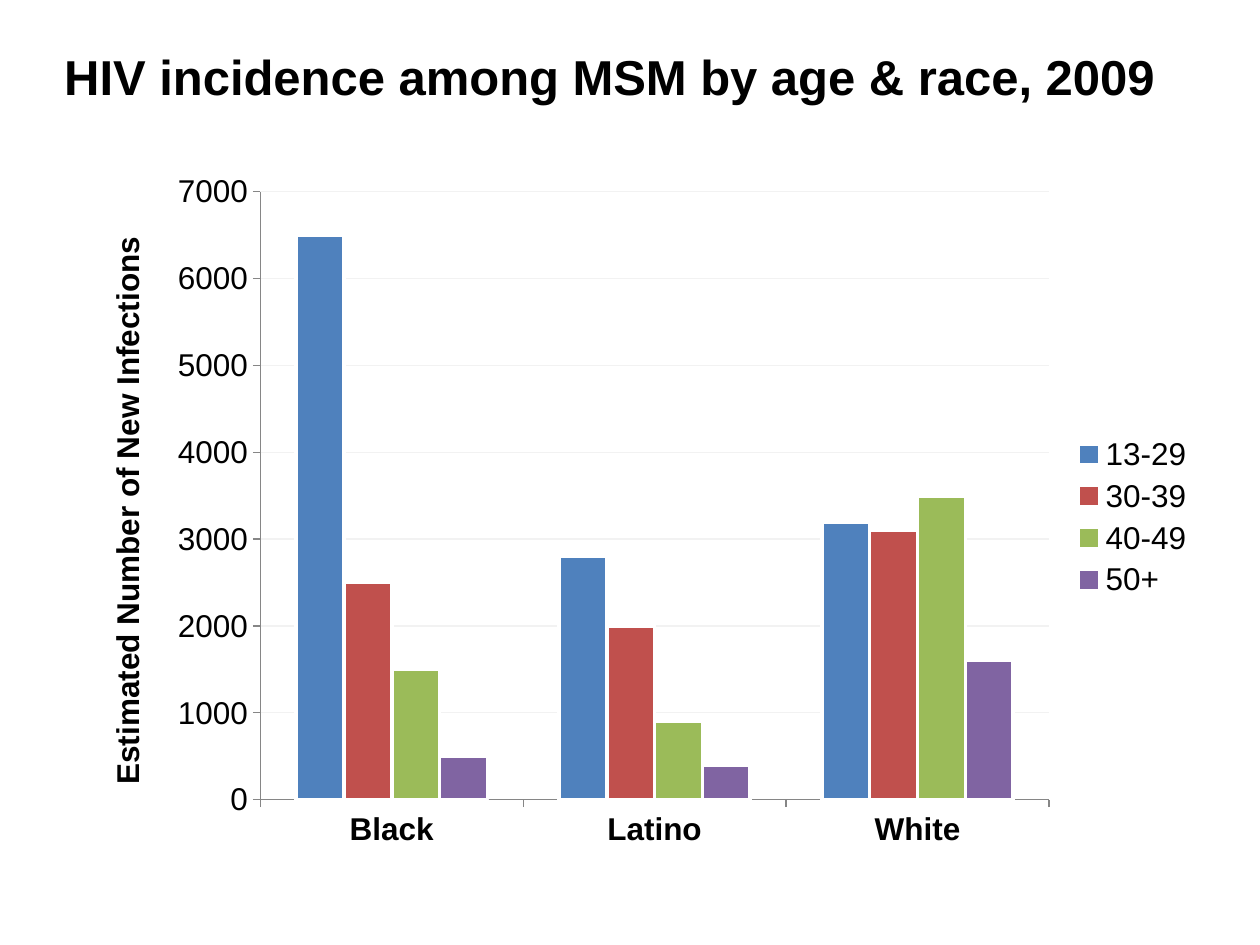
from lxml import etree
from pptx import Presentation
from pptx.chart.data import CategoryChartData
from pptx.dml.color import RGBColor
from pptx.enum.chart import XL_CHART_TYPE, XL_LEGEND_POSITION, XL_TICK_MARK
from pptx.enum.text import MSO_ANCHOR, MSO_AUTO_SIZE, PP_ALIGN
from pptx.oxml.ns import qn
from pptx.util import Inches, Pt

COLUMN_CLUSTERED = XL_CHART_TYPE.COLUMN_CLUSTERED
LEGEND_RIGHT = XL_LEGEND_POSITION.RIGHT
TICK_OUTSIDE = XL_TICK_MARK.OUTSIDE
ALIGN_LEFT = PP_ALIGN.LEFT
ANCHOR_TOP = MSO_ANCHOR.TOP
FIT_SHAPE = MSO_AUTO_SIZE.SHAPE_TO_FIT_TEXT

BLACK = RGBColor(0x00, 0x00, 0x00)
WHITE = RGBColor(0xFF, 0xFF, 0xFF)
GRID_GRAY = RGBColor(0xF2, 0xF2, 0xF2)
AXIS_GRAY = RGBColor(0x86, 0x86, 0x86)
BLUE = RGBColor(0x4F, 0x81, 0xBD)
RED = RGBColor(0xC0, 0x50, 0x4D)
GREEN = RGBColor(0x9B, 0xBB, 0x59)
PURPLE = RGBColor(0x80, 0x64, 0xA2)

RACES = ["Black", "Latino", "White"]
AGE_GROUPS = [
    ("13-29", (6500, 2800, 3200), BLUE),
    ("30-39", (2500, 2000, 3100), RED),
    ("40-49", (1500, 900, 3500), GREEN),
    ("50+", (500, 400, 1600), PURPLE),
]


def format_font(font, name="Arial", size=18, bold=False, color=BLACK):
    font.name = name
    font.size = Pt(size)
    font.bold = bold
    font.color.rgb = color


def write_text(text_frame, text, align=ALIGN_LEFT, **font_format):
    paragraph = text_frame.paragraphs[0]
    paragraph.alignment = align
    run = paragraph.add_run()
    run.text = text
    format_font(run.font, **font_format)


def place_title(slide, left, top, width, height):
    title = slide.shapes.title
    title.left, title.top, title.width, title.height = left, top, width, height
    text_frame = title.text_frame
    text_frame.word_wrap = True
    text_frame.auto_size = FIT_SHAPE
    text_frame.vertical_anchor = ANCHOR_TOP
    write_text(text_frame, "HIV incidence among MSM by age & race, 2009",
               size=28, bold=True)


def set_plot_layout(chart, x, y, w, h):
    plot_area = chart.plots[0]._element.getparent()
    for old_layout in plot_area.findall(qn("c:layout")):
        plot_area.remove(old_layout)
    layout = etree.Element(qn("c:layout"))
    manual = etree.SubElement(layout, qn("c:manualLayout"))
    settings = [("layoutTarget", "inner"), ("xMode", "edge"), ("yMode", "edge"),
                ("x", x), ("y", y), ("w", w), ("h", h)]
    for tag, value in settings:
        etree.SubElement(manual, qn(f"c:{tag}")).set("val", str(value))
    plot_area.insert(0, layout)


def format_axis(axis, bold=False):
    axis.major_tick_mark = TICK_OUTSIDE
    axis.format.line.color.rgb = AXIS_GRAY
    axis.format.line.width = Pt(0.75)
    format_font(axis.tick_labels.font, bold=bold)


def place_chart(slide, left, top, width, height):
    chart_data = CategoryChartData()
    chart_data.categories = RACES
    for name, values, _ in AGE_GROUPS:
        chart_data.add_series(name, values)
    chart = slide.shapes.add_chart(
        COLUMN_CLUSTERED, left, top, width, height, chart_data).chart
    chart.has_title = False
    format_font(chart.font, name="Calibri")

    plot = chart.plots[0]
    plot.vary_by_categories = False
    plot.gap_width = 150
    plot.overlap = 0
    for series, (_, _, color) in zip(plot.series, AGE_GROUPS):
        series.format.fill.solid()
        series.format.fill.fore_color.rgb = color
        series.format.line.color.rgb = WHITE
        series.format.line.width = Pt(2)

    format_axis(chart.category_axis, bold=True)
    value_axis = chart.value_axis
    format_axis(value_axis)
    value_axis.minimum_scale = 0
    value_axis.maximum_scale = 7000
    value_axis.major_unit = 1000
    value_axis.has_major_gridlines = True
    gridline = value_axis.major_gridlines.format.line
    gridline.color.rgb = GRID_GRAY
    gridline.width = Pt(0.75)
    write_text(value_axis.axis_title.text_frame,
               "Estimated Number of New Infections", align=None, bold=True)

    chart.has_legend = True
    chart.legend.position = LEGEND_RIGHT
    chart.legend.include_in_layout = False
    format_font(chart.legend.font)
    set_plot_layout(chart, 0.167, 0.043, 0.694, 0.854)


def main():
    presentation = Presentation()
    presentation.slide_width = Inches(10)
    presentation.slide_height = Inches(7.5)
    slide = presentation.slides.add_slide(presentation.slide_layouts[5])
    place_title(slide, Inches(0.41), Inches(0.32), Inches(9.16), Inches(0.57))
    place_chart(slide, Inches(0.56), Inches(1.28), Inches(9.02), Inches(5.65))
    presentation.save("out.pptx")


if __name__ == "__main__":
    main()
